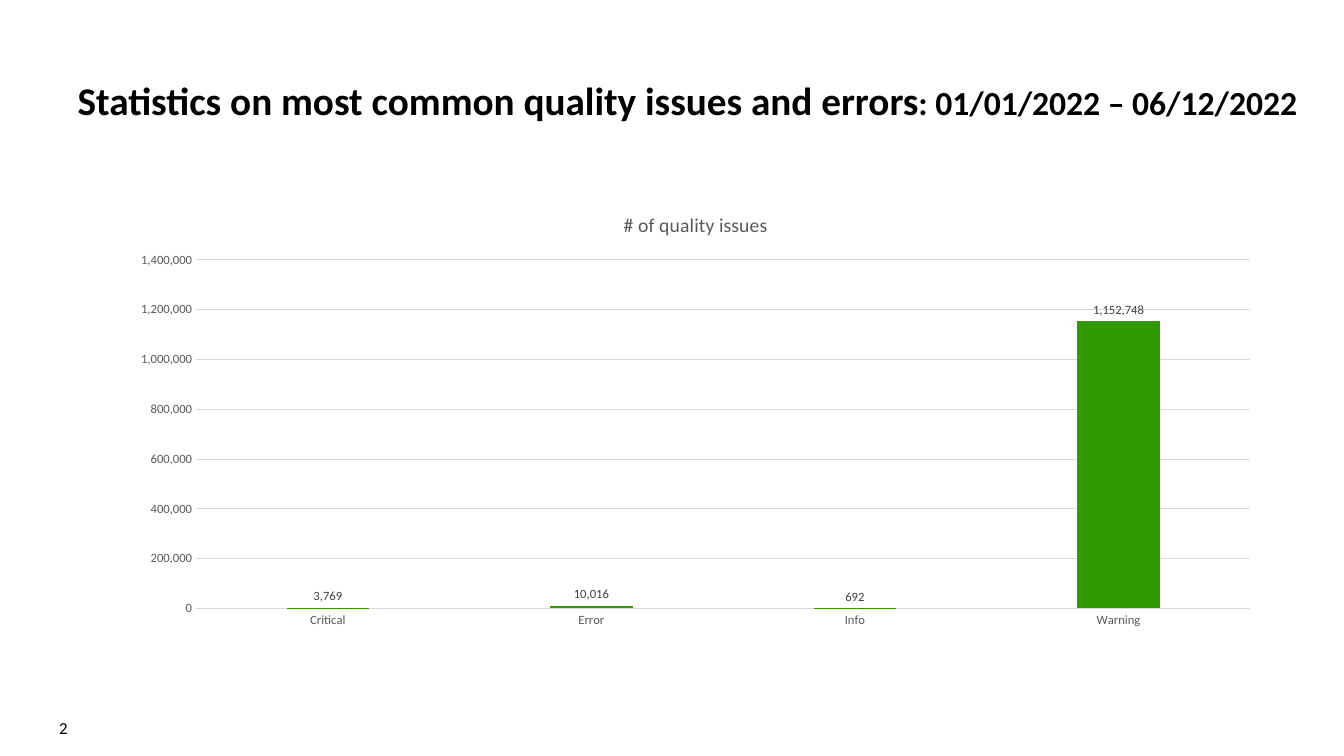
import pptx
import pptx.util
import pptx.chart.data
import pptx.dml.color
import pptx.enum.chart
import pptx.enum.text
from pptx.util import Inches

FONT = "Calibri"
COLORS = {
    "text": "000000",
    "axis_text": "595959",
    "label_text": "404040",
    "grid": "D9D9D9",
    "column": "339900",
}
CHART_TITLE = "# of quality issues"
ISSUE_COUNTS = {"Critical": 3769, "Error": 10016, "Info": 692, "Warning": 1152748}
NUMBER_FORMAT = "#,##0"


def color(name):
    return pptx.dml.color.RGBColor.from_string(COLORS[name])


def format_font(font, size, color_name, bold=False):
    font.name = FONT
    font.size = pptx.util.Pt(size)
    font.bold = bold
    font.color.rgb = color(color_name)


def add_text(slide, runs, left, top, width, height, *, anchor, align="LEFT",
             bold=False, margins=(0.1, 0.05, 0.1, 0.05)):
    shape = slide.shapes.add_textbox(Inches(left), Inches(top), Inches(width), Inches(height))
    frame = shape.text_frame
    frame.word_wrap = True
    frame.vertical_anchor = pptx.enum.text.MSO_ANCHOR[anchor]
    frame.margin_left, frame.margin_top, frame.margin_right, frame.margin_bottom = map(Inches, margins)
    paragraph = frame.paragraphs[0]
    paragraph.alignment = pptx.enum.text.PP_ALIGN[align]
    for text, size in runs:
        run = paragraph.add_run()
        run.text = text
        format_font(run.font, size, "text", bold)


def format_line(line):
    line.color.rgb = color("grid")
    line.width = pptx.util.Pt(0.75)


def format_axes(chart):
    for axis in (chart.category_axis, chart.value_axis):
        axis.major_tick_mark = pptx.enum.chart.XL_TICK_MARK.NONE
        axis.minor_tick_mark = pptx.enum.chart.XL_TICK_MARK.NONE
        format_font(axis.tick_labels.font, 9, "axis_text")
    format_line(chart.category_axis.format.line)
    chart.value_axis.format.line.fill.background()
    chart.value_axis.has_major_gridlines = True
    format_line(chart.value_axis.major_gridlines.format.line)
    chart.value_axis.tick_labels.number_format = NUMBER_FORMAT
    chart.value_axis.tick_labels.number_format_is_linked = False


def format_columns(plot):
    plot.gap_width = 219
    plot.overlap = -27
    plot.vary_by_categories = False
    series = plot.series[0]
    series.format.fill.solid()
    series.format.fill.fore_color.rgb = color("column")
    series.invert_if_negative = False
    labels = series.data_labels
    labels.show_value = True
    labels.number_format = NUMBER_FORMAT
    labels.number_format_is_linked = False
    labels.position = pptx.enum.chart.XL_LABEL_POSITION.OUTSIDE_END
    format_font(labels.font, 9, "label_text")


def add_issue_chart(slide, left, top, width, height):
    data = pptx.chart.data.CategoryChartData(number_format=NUMBER_FORMAT)
    data.categories = list(ISSUE_COUNTS)
    data.add_series(CHART_TITLE, list(ISSUE_COUNTS.values()))
    chart = slide.shapes.add_chart(
        pptx.enum.chart.XL_CHART_TYPE.COLUMN_CLUSTERED,
        Inches(left), Inches(top), Inches(width), Inches(height), data,
    ).chart
    format_font(chart.font, 10, "text")
    chart.has_legend = False
    chart.has_title = True
    chart.chart_title.include_in_layout = False
    title = chart.chart_title.text_frame
    title.text = CHART_TITLE
    format_font(title.paragraphs[0].runs[0].font, 14, "axis_text")
    format_axes(chart)
    format_columns(chart.plots[0])


def main():
    presentation = pptx.Presentation()
    presentation.slide_width = Inches(13.33)
    presentation.slide_height = Inches(7.5)
    slide = presentation.slides.add_slide(presentation.slide_layouts[6])
    add_text(
        slide,
        [("Statistics on most common quality issues and errors", 28),
         (": 01/01/2022 – 06/12/2022", 24)],
        0.77, 0.14, 12.25, 1.08, anchor="BOTTOM", bold=True, margins=(0, 0.05, 0, 0),
    )
    add_text(slide, [("2", 12)], 0, 7.02, 0.77, 0.4, anchor="MIDDLE", align="RIGHT")
    add_issue_chart(slide, 1.17, 1.92, 11.46, 4.39)
    presentation.save("out.pptx")


if __name__ == "__main__":
    main()
